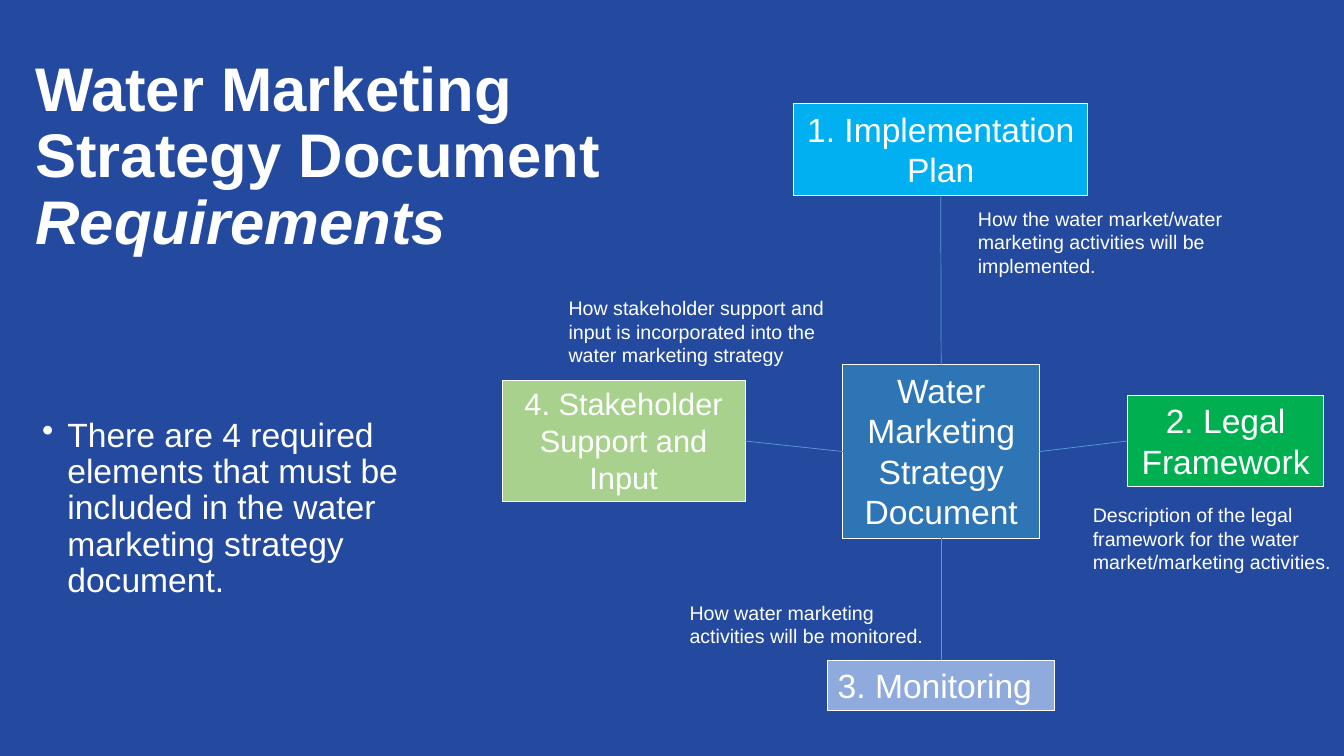
"""Build the water marketing strategy requirements slide."""
from dataclasses import dataclass

from lxml.etree import SubElement
from pptx import Presentation
from pptx.dml.color import RGBColor as Color
from pptx.enum.shapes import MSO_CONNECTOR as Connector, MSO_SHAPE as Preset
from pptx.enum.text import MSO_ANCHOR as Anchor, MSO_AUTO_SIZE as AutoSize, PP_ALIGN as Align
from pptx.oxml.ns import qn
from pptx.util import Emu, Pt

PX = 9144
TOP, LEFT, BOTTOM, RIGHT = range(4)


@dataclass(frozen=True)
class Theme:
    """Colours, font and type sizes of the slide."""
    font: str = "Arial"
    background: str = "244A9F"
    text: str = "FFFFFF"
    link: str = "5B9BD5"
    center: str = "2E75B6"
    plan: str = "00B0F0"
    legal: str = "00B050"
    monitoring: str = "8FAADC"
    stakeholder: str = "A9D18E"
    title_size: int = 44
    body_size: int = 24
    tight_size: int = 22
    note_size: int = 14


def px(*lengths):
    """Turn pixel lengths into EMU."""
    return [Emu(length * PX) for length in lengths]


class SlideBuilder:
    """Draw themed elements on one slide."""

    def __init__(self, slide, theme):
        self.slide = slide
        self.theme = theme
        fill = slide.background.fill
        fill.solid()
        fill.fore_color.rgb = Color.from_string(theme.background)

    def style(self, paragraph, size, align=Align.LEFT):
        """Set the font and alignment of a paragraph."""
        paragraph.alignment = align
        paragraph.font.name = self.theme.font
        paragraph.font.size = Pt(size)
        paragraph.font.color.rgb = Color.from_string(self.theme.text)

    def title(self, box, text, emphasis):
        """Place the title with its closing words in italics."""
        title = self.slide.shapes.title
        title.left, title.top, title.width, title.height = px(*box)
        frame = title.text_frame
        frame.auto_size = AutoSize.NONE
        frame.vertical_anchor = Anchor.MIDDLE
        paragraph = frame.paragraphs[0]
        paragraph.add_run().text = text
        ending = paragraph.add_run()
        ending.text = emphasis
        ending.font.italic = True
        paragraph.line_spacing = 0.9
        self.style(paragraph, self.theme.title_size)
        paragraph.font.bold = True

    def text(self, box, text, size):
        """Add a wrapped text box and return its paragraph."""
        frame = self.slide.shapes.add_textbox(*px(*box)).text_frame
        frame.word_wrap = True
        paragraph = frame.paragraphs[0]
        paragraph.text = text
        self.style(paragraph, size)
        return paragraph

    def bullet(self, box, text):
        """Add a bulleted paragraph with a hanging indent."""
        paragraph = self.text(box, text, self.theme.body_size)
        paragraph.line_spacing = 0.9
        properties = paragraph._p.get_or_add_pPr()
        indent = 25 * PX
        properties.set("marL", str(indent))
        properties.set("indent", str(-indent))
        mark = properties.makeelement(qn("a:buChar"), {"char": "•"})
        properties.find(qn("a:defRPr")).addprevious(mark)

    def node(self, box, text, fill, size, align=Align.CENTER):
        """Add an outlined rectangle with a label."""
        shape = self.slide.shapes.add_shape(Preset.RECTANGLE, *px(*box))
        shape.shadow.inherit = False
        shape.fill.solid()
        shape.fill.fore_color.rgb = Color.from_string(fill)
        shape.line.color.rgb = Color.from_string(self.theme.text)
        shape.line.width = Pt(0.75)
        frame = shape.text_frame
        frame.word_wrap = True
        frame.auto_size = AutoSize.SHAPE_TO_FIT_TEXT
        frame.vertical_anchor = Anchor.TOP
        paragraph = frame.paragraphs[0]
        paragraph.text = text
        self.style(paragraph, size, align)
        return shape

    def link(self, start, start_side, end, end_side):
        """Connect the sides of two nodes with a thin line."""
        line = self.slide.shapes.add_connector(Connector.STRAIGHT, 0, 0, 0, 0)
        line.begin_connect(start, start_side)
        line.end_connect(end, end_side)
        line.line.color.rgb = Color.from_string(self.theme.link)
        line.line.width = Pt(0.5)
        SubElement(line._element.spPr, qn("a:effectLst"))


def main():
    """Assemble and save the slide."""
    theme = Theme()
    presentation = Presentation()
    presentation.slide_width, presentation.slide_height = px(1333, 750)
    slide = presentation.slides.add_slide(presentation.slide_layouts[5])
    builder = SlideBuilder(slide, theme)

    builder.title((25, 31, 718, 251), "Water Marketing Strategy Document ", "Requirements")
    builder.bullet((32, 410, 394, 231),
                   "There are 4 required elements that must be included in the water "
                   "marketing strategy document.")

    notes = [
        ((960, 200, 268, 81),
         "How the water market/water marketing activities will be implemented."),
        ((1074, 494, 259, 81),
         "Description of the legal framework for the water market/marketing activities."),
        ((674, 591, 268, 57), "How water marketing activities will be monitored."),
        ((554, 289, 292, 81),
         "How stakeholder support and input is incorporated into the water marketing strategy"),
    ]
    for box, text in notes:
        builder.text(box, text, theme.note_size)

    center = builder.node((836, 362, 195, 172), "Water Marketing Strategy Document",
                          theme.center, theme.body_size)
    plan = builder.node((787, 103, 292, 91), "1. Implementation Plan",
                        theme.plan, theme.body_size)
    legal = builder.node((1118, 392, 195, 91), "2. Legal Framework",
                         theme.legal, theme.body_size)
    monitoring = builder.node((821, 655, 225, 50), "3. Monitoring",
                              theme.monitoring, theme.body_size, Align.LEFT)
    stakeholder = builder.node((498, 377, 241, 121), "4. Stakeholder Support and Input",
                               theme.stakeholder, theme.tight_size)

    builder.link(plan, BOTTOM, center, TOP)
    builder.link(legal, LEFT, center, RIGHT)
    builder.link(monitoring, TOP, center, BOTTOM)
    builder.link(stakeholder, RIGHT, center, LEFT)

    presentation.save("out.pptx")


if __name__ == "__main__":
    main()
